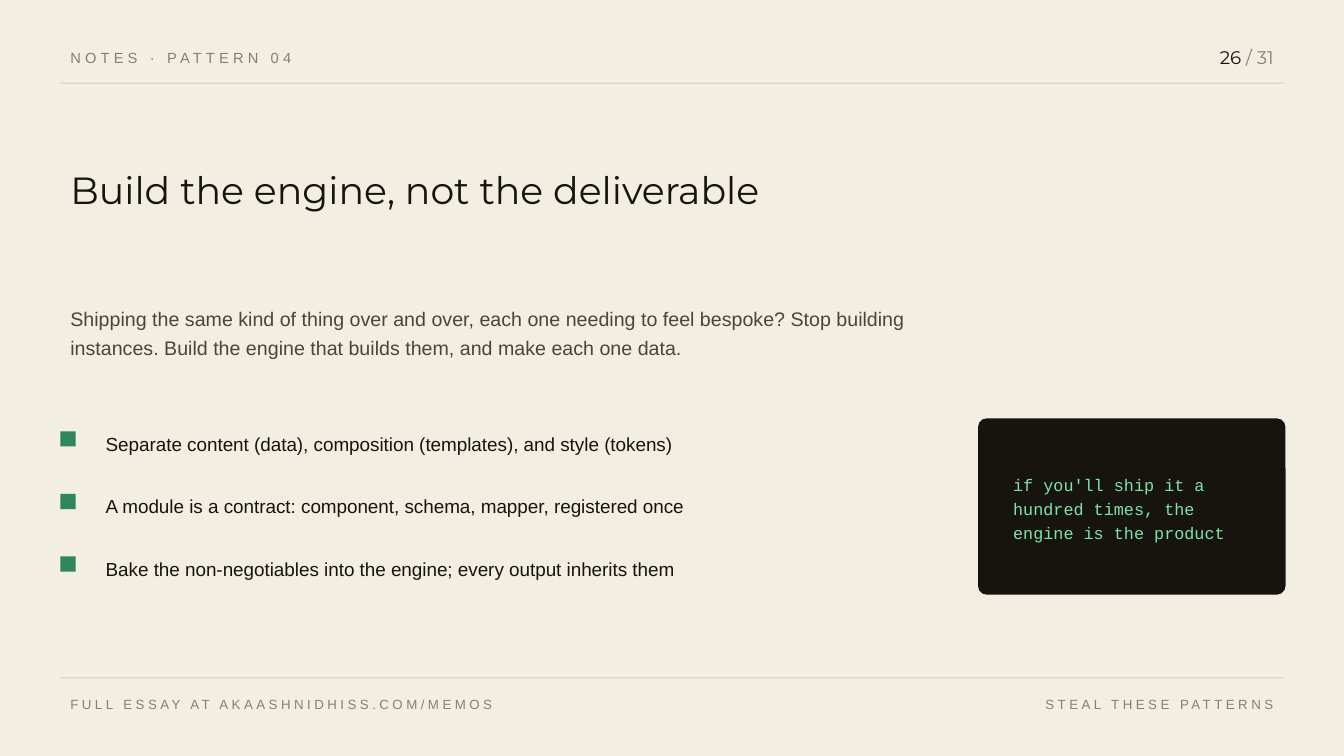
from dataclasses import dataclass

from pptx import Presentation
from pptx.dml.color import RGBColor
from pptx.enum.shapes import MSO_SHAPE
from pptx.enum.text import MSO_ANCHOR, PP_ALIGN
from pptx.util import Inches, Pt

RECTANGLE = MSO_SHAPE.RECTANGLE
ROUNDED = MSO_SHAPE.ROUNDED_RECTANGLE
MIDDLE = MSO_ANCHOR.MIDDLE
LEFT, RIGHT = PP_ALIGN.LEFT, PP_ALIGN.RIGHT


@dataclass(frozen=True)
class Style:
    size: float
    color: str
    font: str = "Arial"
    tracking: float = 0


@dataclass(frozen=True)
class Theme:
    paper: str = "F3EEE2"
    rule: str = "D8CDB4"
    accent: str = "2F865D"
    ink: str = "171410"
    kicker: Style = Style(10.5, "8A7F68", tracking=3)
    footer: Style = Style(9.5, "8A7F68", tracking=2.5)
    page_number: Style = Style(13, "171410", "Montserrat")
    page_total: Style = Style(13, "8A7F68", "Montserrat")
    title: Style = Style(27, "171410", "Montserrat")
    lead: Style = Style(14, "4A443A")
    point: Style = Style(13.5, "171410")
    code: Style = Style(12, "7EE2A8", "Courier New")


THEME = Theme()
MARGIN = 0.6
CONTENT_WIDTH = 12.13
POINTS_TOP = 4.15
POINT_PITCH = 0.62
POINTS = [
    "Separate content (data), composition (templates), and style (tokens)",
    "A module is a contract: component, schema, mapper, registered once",
    "Bake the non-negotiables into the engine; every output inherits them",
]


def add_text(page, place, *runs, align=LEFT, line_spacing=None):
    """Add one paragraph made of (text, style) runs, centred vertically."""
    box = page.shapes.add_textbox(*map(Inches, place))
    frame = box.text_frame
    frame.word_wrap = True
    frame.vertical_anchor = MIDDLE
    para = frame.paragraphs[0]
    para.alignment = align
    para.line_spacing = line_spacing
    for text, style in runs:
        span = para.add_run()
        span.text = text
        for name, value in {"name": style.font, "size": Pt(style.size)}.items():
            setattr(span.font, name, value)
        span.font.color.rgb = RGBColor.from_string(style.color)
        if style.tracking:
            span.font._element.set("spc", str(int(style.tracking * 100)))


def add_block(page, place, color, kind=RECTANGLE):
    block = page.shapes.add_shape(kind, *map(Inches, place))
    block.shadow.inherit = False
    block.fill.solid()
    block.fill.fore_color.rgb = RGBColor.from_string(color)
    block.line.fill.background()
    return block


def add_rule(page, top):
    add_block(page, (MARGIN, top, CONTENT_WIDTH, 0.01), THEME.rule)


def add_header(page):
    add_text(page, (MARGIN, 0.42, 9.5, 0.3), ("NOTES · PATTERN 04", THEME.kicker))
    add_text(page, (11.33, 0.4, 1.4, 0.34), ("26", THEME.page_number),
             (" / 31", THEME.page_total), align=RIGHT)
    add_rule(page, 0.82)


def add_footer(page):
    add_rule(page, 6.72)
    add_text(page, (MARGIN, 6.84, 8.6, 0.3),
             ("FULL ESSAY AT AKAASHNIDHISS.COM/MEMOS", THEME.footer))
    add_text(page, (8.53, 6.84, 4.2, 0.3), ("STEAL THESE PATTERNS", THEME.footer),
             align=RIGHT)


def add_points(page):
    for index, point in enumerate(POINTS):
        top = POINTS_TOP + index * POINT_PITCH
        add_block(page, (MARGIN, top + 0.13, 0.15, 0.15), THEME.accent)
        add_text(page, (0.95, top, 8.6, 0.5), (point, THEME.point))


def add_code_card(page, left, top, width, height, text, padding=0.25):
    card = add_block(page, (left, top, width, height), THEME.ink, ROUNDED)
    card.adjustments[0] = 0.05
    inner = (left + padding, top + padding, width - 2 * padding, height - 2 * padding)
    add_text(page, inner, (text, THEME.code), line_spacing=1.2)


def main():
    deck = Presentation()
    deck.slide_width, deck.slide_height = Inches(13.33), Inches(7.5)
    page = deck.slides.add_slide(deck.slide_layouts[6])
    page.background.fill.solid()
    page.background.fill.fore_color.rgb = RGBColor.from_string(THEME.paper)

    add_header(page)
    add_footer(page)
    add_text(page, (MARGIN, 1.2, 9.6, 1.35),
             ("Build the engine, not the deliverable", THEME.title))
    add_text(page, (MARGIN, 2.75, 8.6, 1.05),
             ("Shipping the same kind of thing over and over, each one needing to feel "
              "bespoke? Stop building instances. Build the engine that builds them, and "
              "make each one data.", THEME.lead), line_spacing=1.25)
    add_points(page)
    add_code_card(page, 9.7, POINTS_TOP, 3.05, 1.75,
                  "if you'll ship it a hundred times, the engine is the product")
    deck.save("out.pptx")


if __name__ == "__main__":
    main()
